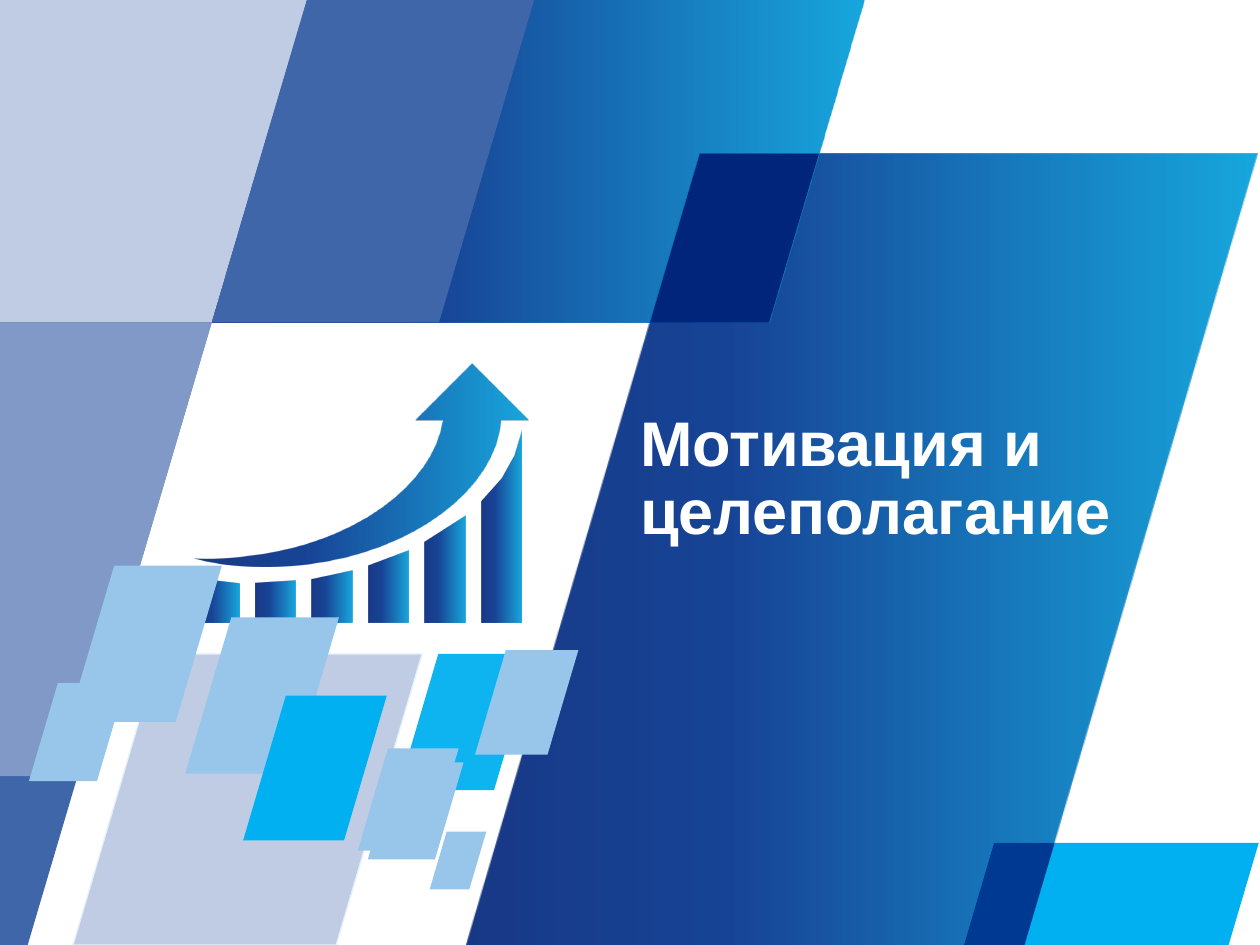
"""Build the title slide with slanted blue panels and a growth chart emblem."""
from lxml import etree
from pptx import Presentation
from pptx.dml.color import RGBColor
from pptx.enum.text import MSO_ANCHOR, PP_ALIGN
from pptx.oxml.ns import qn
from pptx.util import Inches, Pt

NAVY = RGBColor(0x00, 0x25, 0x7A)
ROYAL = RGBColor(0x00, 0x33, 0x8D)
AZURE = RGBColor(0x00, 0x9F, 0xDA)
CYAN = RGBColor(0x00, 0xB0, 0xF0)
STEEL = RGBColor(0x40, 0x66, 0xAA)
PERIWINKLE = RGBColor(0x80, 0x99, 0xC6)
MIST = RGBColor(0xBF, 0xCC, 0xE3)
FROST = RGBColor(0xE5, 0xF1, 0xFA)
SKY = RGBColor(0x98, 0xC6, 0xEA)
WHITE = RGBColor(0xFF, 0xFF, 0xFF)
GRADIENT = [(0, NAVY), (35, ROYAL), (100, AZURE)]
SLANT = 0.295

deck = Presentation()
deck.slide_width, deck.slide_height = Inches(10), Inches(7.5)
page = deck.slides.add_slide(deck.slide_layouts[6])


def add_outline(points, color=None, alpha=100):
    """Add a closed outline; without a color it takes the blue gradient."""
    corners = [(Inches(x), Inches(y)) for x, y in points]
    builder = page.shapes.build_freeform(*corners[0], scale=1.0)
    builder.add_line_segments(corners[1:], close=True)
    shape = builder.convert_to_shape()
    shape.shadow.inherit = False
    shape.line.fill.background()
    if color is None:
        shape.fill.gradient()
        shape.fill.gradient_angle = 0
        stops = shape._element.spPr.find(".//" + qn("a:gsLst"))
        for stop in list(stops):
            stops.remove(stop)
        for position, tone in GRADIENT:
            stop = etree.SubElement(stops, qn("a:gs"), pos=str(position * 1000))
            tint = etree.SubElement(stop, qn("a:srgbClr"), val=str(tone))
            etree.SubElement(tint, qn("a:alpha"), val="90000")
    else:
        shape.fill.solid()
        shape.fill.fore_color.rgb = color
        if alpha < 100:
            tint = shape._element.spPr.find(".//" + qn("a:srgbClr"))
            etree.SubElement(tint, qn("a:alpha"), val=str(alpha * 1000))
    return shape


def add_slanted(left, top, width, height, color=None, alpha=100):
    """Add a parallelogram that leans to the right at the common slant."""
    lean = SLANT * height
    right, bottom = left + width, top + height
    return add_outline([(left + lean, top), (right, top),
                        (right - lean, bottom), (left, bottom)], color, alpha)


add_slanted(3.7, 1.22, 6.28, 6.28)
add_slanted(7.65, 6.69, 2.34, 0.81, CYAN)
pale_panel = add_slanted(0.58, 5.19, 2.77, 2.31, MIST)
pale_panel.line.color.rgb = FROST
pale_panel.line.width = Pt(0.75)
add_slanted(1.68, 0, 5.18, 2.56)
add_outline([(2.44, 0), (0, 0), (0, 3.45), (1.41, 3.45)], MIST)
add_outline([(0, 2.56), (0, 7.5), (0.22, 7.5), (1.68, 2.56)], STEEL)
add_slanted(7.65, 6.69, 0.72, 0.81, ROYAL, 95)
add_slanted(5.16, 1.22, 1.34, 1.34, NAVY)
add_slanted(3.16, 5.19, 1.08, 1.08, CYAN, 95)
add_slanted(1.68, 0, 2.56, 2.56, STEEL)
add_outline([(0, 2.56), (0, 6.16), (0.62, 6.16), (1.68, 2.56)], PERIWINKLE)

arrow = [(3.97, 3.34), (4.19, 3.34), (3.74, 2.89), (3.29, 3.34), (3.51, 3.34)]
curves = [
    [(3.51, 3.34), (3.43, 3.86), (2.79, 4.32), (1.98, 4.41)],
    [(1.98, 4.41), (1.82, 4.43), (1.68, 4.44), (1.54, 4.43)],
    [(1.54, 4.43), (1.8, 4.5), (2.11, 4.52), (2.43, 4.48)],
    [(2.43, 4.48), (3.28, 4.38), (3.93, 3.88), (3.97, 3.34)],
]
for curve in curves:
    for step in range(1, 17):
        t = step / 16
        weights = [(1 - t) ** 3, 3 * t * (1 - t) ** 2, 3 * t * t * (1 - t), t ** 3]
        arrow.append(tuple(sum(w * point[axis] for w, point in zip(weights, curve))
                           for axis in (0, 1)))
add_outline(arrow)

bar_tops = [(4.59, 4.63), (4.63, 4.61), (4.6, 4.53),
            (4.49, 4.37), (4.3, 4.09), (3.98, 3.42)]
for index, (left_top, right_top) in enumerate(bar_tops):
    left = 1.58 + 0.448 * index
    right = left + 0.32
    bar = [(left, 4.94), (right, 4.94), (right, right_top)]
    if index == 5:
        bar += [(right - 0.06, 3.62), (right - 0.16, 3.8)]
    add_outline(bar + [(left, left_top)])

tiles = [
    (1.47, 4.9, 1.22, 1.24, SKY),
    (0.23, 5.42, 0.77, 0.78, SKY),
    (3.41, 6.6, 0.45, 0.46, SKY),
    (2.92, 6.05, 0.76, 0.77, SKY),
    (2.84, 5.94, 0.8, 0.81, SKY),
    (3.77, 5.16, 0.82, 0.83, SKY),
    (0.54, 4.49, 1.22, 1.24, SKY),
    (1.93, 5.52, 1.14, 1.15, CYAN),
]
for tile in tiles:
    add_slanted(*tile)

title = page.shapes.add_textbox(Inches(5.08), Inches(3.27), Inches(4.56), Inches(1.89))
frame = title.text_frame
frame.word_wrap = True
frame.vertical_anchor = MSO_ANCHOR.TOP
frame.margin_left = frame.margin_right = frame.margin_top = frame.margin_bottom = 0
frame.text = "Мотивация и целеполагание"
para = frame.paragraphs[0]
para.alignment = PP_ALIGN.LEFT
para.line_spacing = 0.9
span = para.runs[0]
span.font.name = "Arial"
span.font.size = Pt(36)
span.font.bold = True
span.font.color.rgb = WHITE

deck.save("out.pptx")
